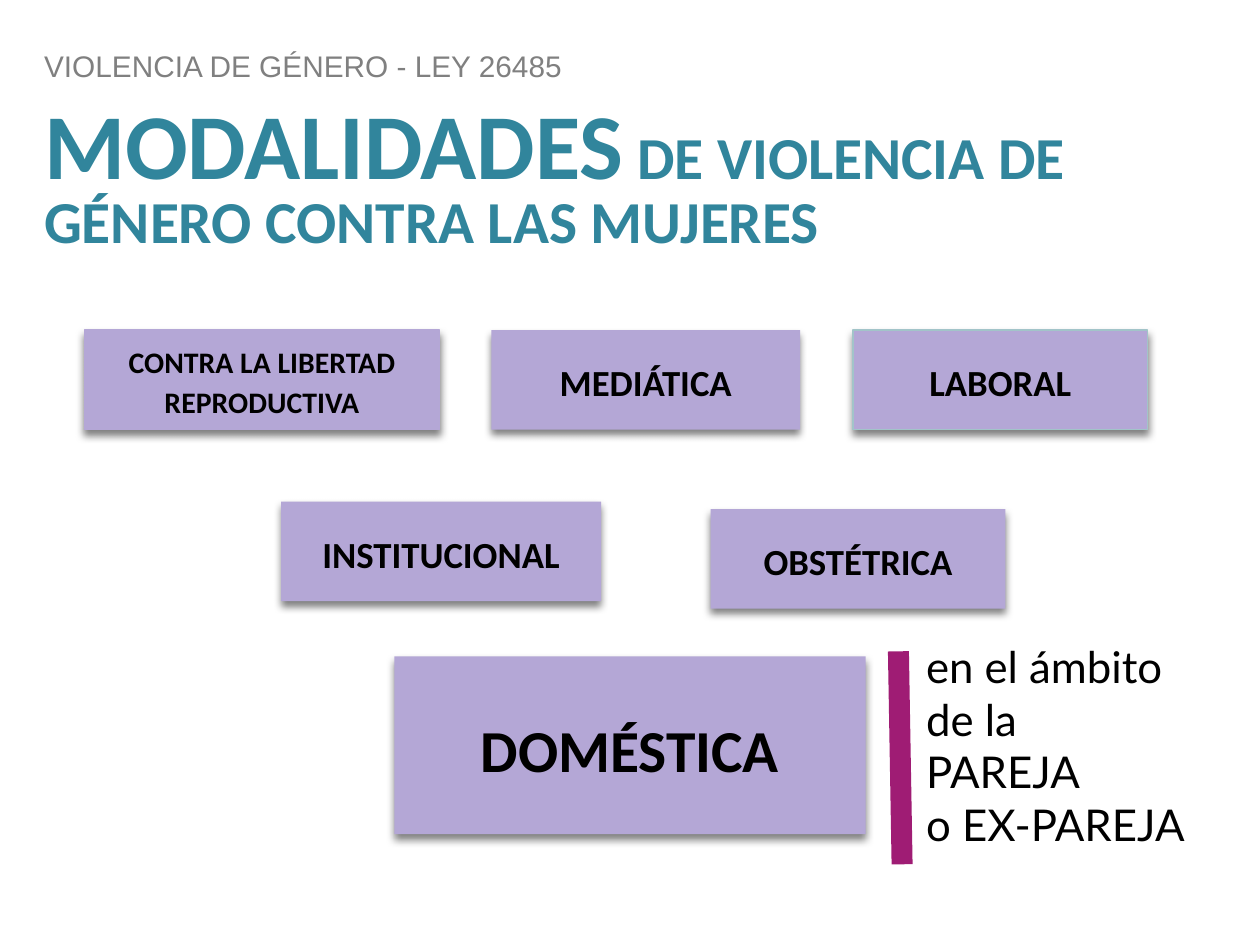
from lxml import etree
from pptx import Presentation
from pptx import util as u
from pptx.dml.color import RGBColor
from pptx.enum import shapes, text
from pptx.oxml.ns import qn

Pt = u.Pt
TEAL, LILAC, PURPLE, GRAY, BLACK = "31859C", "B4A7D6", "9F1C74", "808080", "000000"


def color(value):
    return RGBColor.from_string(value)


def shadow_effect():
    """Soft black shadow falling straight down."""
    effects = etree.Element(qn("a:effectLst"))
    outer = etree.SubElement(effects, qn("a:outerShdw"), blurRad=str(Pt(4.5)),
                             dist=str(Pt(3)), dir="5400000", algn="b", rotWithShape="0")
    rgb = etree.SubElement(outer, qn("a:srgbClr"), val=BLACK)
    etree.SubElement(rgb, qn("a:alpha"), val="50000")
    return effects


def add_run(p, words, size, font="Calibri", fill=BLACK, bold=False, shadow=False):
    r = p.add_run()
    r.text = words
    r.font.size, r.font.name, r.font.bold = Pt(size), font, bold
    r.font.color.rgb = color(fill)
    if shadow:
        r.font._element.find(qn("a:solidFill")).addnext(shadow_effect())


class Deck:
    def __init__(self, width, height):
        self.prs = Presentation()
        self.prs.slide_width, self.prs.slide_height = Pt(width), Pt(height)
        # Section header layout: a title and a body without bullets
        self.s = self.prs.slides.add_slide(self.prs.slide_layouts[2])

    def frame(self, sp, inset, anchor):
        tf = sp.text_frame
        tf.word_wrap, tf.auto_size = True, text.MSO_AUTO_SIZE.NONE
        tf.margin_left = tf.margin_right = tf.margin_top = tf.margin_bottom = Pt(inset)
        tf.vertical_anchor = anchor
        return tf

    def placeholder(self, idx, box, anchor, runs):
        sp = self.s.placeholders[idx]
        sp.left, sp.top, sp.width, sp.height = map(Pt, box)
        p = self.frame(sp, 2.9, anchor).paragraphs[0]
        p.alignment, p.line_spacing = text.PP_ALIGN.LEFT, 0.8
        p.space_before = Pt(0)
        for words, style in runs:
            add_run(p, words, **style)

    def card(self, words, box, size=21, line=None):
        sp = self.s.shapes.add_shape(shapes.MSO_SHAPE.RECTANGLE, *map(Pt, box))
        sp.fill.solid()
        sp.fill.fore_color.rgb = color(LILAC)
        if line:
            sp.line.color.rgb, sp.line.width = color(line), Pt(0.75)
        else:
            sp.line.fill.background()
        sp._element.spPr.append(shadow_effect())
        p = self.frame(sp, 5, text.MSO_ANCHOR.MIDDLE).paragraphs[0]
        p.alignment, p.line_spacing = text.PP_ALIGN.CENTER, 1.1
        p.space_before = p.space_after = Pt(5.6)
        add_run(p, words, size, bold=True)

    def note(self, paragraphs, box, **style):
        sp = self.s.shapes.add_textbox(*map(Pt, box))
        tf = self.frame(sp, 5, text.MSO_ANCHOR.TOP)
        for i, lines in enumerate(paragraphs):
            p = tf.add_paragraph() if i else tf.paragraphs[0]
            for j, words in enumerate(lines):
                if j:
                    p.add_line_break()
                add_run(p, words, **style)

    def bar(self, start, end, fill, width):
        c = self.s.shapes.add_connector(shapes.MSO_CONNECTOR.STRAIGHT,
                                        *map(Pt, start + end))
        c.line.color.rgb, c.line.width = color(fill), Pt(width)
        etree.SubElement(c._element.spPr, qn("a:effectLst"))


def main():
    deck = Deck(720, 540)
    deck.placeholder(1, (22.3, 25.2, 618.5, 25.2), text.MSO_ANCHOR.BOTTOM, [
        ("VIOLENCIA DE GÉNERO - LEY 26485", dict(size=17, font="Arial", fill=GRAY))])
    heading = dict(fill=TEAL, bold=True, shadow=True)
    deck.placeholder(0, (22.3, 59, 675.4, 80.6), text.MSO_ANCHOR.TOP, [
        ("MODALIDADES", dict(size=53, **heading)),
        (" DE VIOLENCIA DE GÉNERO CONTRA LAS MUJERES", dict(size=34, **heading))])

    top, height = 188.6, 56.9
    deck.card("DOMÉSTICA", (225.4, 375.1, 269.3, 101.5), size=34)
    deck.card("MEDIÁTICA", (280.8, top, 176.4, height))
    deck.card("OBSTÉTRICA", (406.1, 290.9, 168.5, height))
    deck.card("CONTRA LA LIBERTAD REPRODUCTIVA", (48.2, top, 203, height),
              size=17, line=LILAC)
    deck.card("LABORAL", (487.4, top, 168.5, height), line="A2C4C9")
    deck.card("INSTITUCIONAL", (160.6, 286.6, 182.9, height))

    deck.note([["en el ámbito de la"], ["PAREJA", "o EX-PAREJA"]],
              (524.2, 360.7, 176.4, 67.7), size=25, font="Lato")
    deck.bar((513.4, 372.2), (515.5, 493.9), PURPLE, 12)
    deck.prs.save("out.pptx")


if __name__ == "__main__":
    main()
